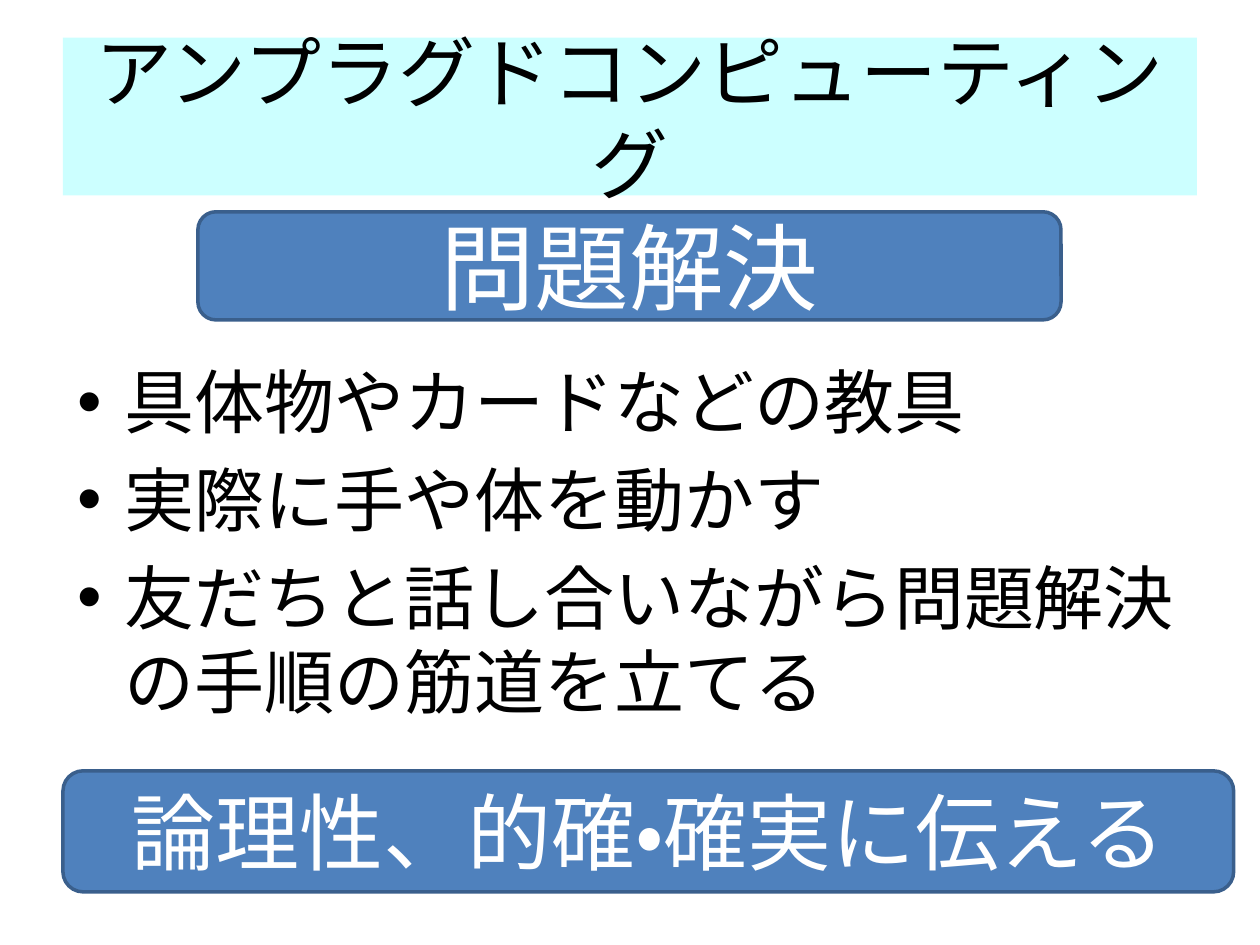
from dataclasses import dataclass

from lxml import etree
from pptx import Presentation
from pptx import util as u
from pptx.dml.color import RGBColor
from pptx.enum import lang, shapes, text
from pptx.oxml import ns


@dataclass(frozen=True)
class Theme:
    """Hold the colours, font and type sizes."""
    font: str = "Calibri"
    ink: str = "000000"
    pale: str = "CCFFFF"
    blue: str = "4F81BD"
    edge: str = "3A5F8C"
    white: str = "FFFFFF"
    title: int = 44
    body: int = 40
    goal: int = 54
    skill: int = 48


LOOK = Theme()
POINTS = (
    "具体物やカードなどの教具",
    "実際に手や体を動かす",
    "友だちと話し合いながら問題解決の手順の筋道を立てる",
)


def add_run(para, words, size, tint):
    """Add one styled run to a paragraph."""
    run = para.add_run()
    run.text = words
    font = run.font
    font.name = LOOK.font
    font.size = u.Pt(size)
    font.color.rgb = RGBColor.from_string(tint)
    font.language_id = lang.MSO_LANGUAGE_ID.JAPANESE


def add_panel(slide, kind, area, words, size, fill, tint, edge=None):
    """Add a filled shape with centred text."""
    panel = slide.shapes.add_shape(kind, *map(u.Cm, area))
    panel.shadow.inherit = False
    panel.fill.solid()
    panel.fill.fore_color.rgb = RGBColor.from_string(fill)
    if edge:
        panel.line.color.rgb = RGBColor.from_string(edge)
        panel.line.width = u.Pt(2)
    else:
        panel.line.fill.background()
    frame = panel.text_frame
    frame.word_wrap = True
    frame.vertical_anchor = text.MSO_ANCHOR.MIDDLE
    para = frame.paragraphs[0]
    para.alignment = text.PP_ALIGN.CENTER
    add_run(para, words, size, tint)


def set_bullet(para):
    """Give a paragraph a hanging round bullet."""
    props = para._p.get_or_add_pPr()
    hang = u.Cm(0.95)
    props.set("marL", str(hang))
    props.set("indent", str(-hang))
    face = etree.SubElement(props, ns.qn("a:buFont"))
    face.set("typeface", "Arial")
    mark = etree.SubElement(props, ns.qn("a:buChar"))
    mark.set("char", "•")


def add_list(slide, area, items):
    """Add a text box of bulleted items."""
    frame = slide.shapes.add_textbox(*map(u.Cm, area)).text_frame
    frame.word_wrap = True
    for rank, item in enumerate(items):
        para = frame.add_paragraph() if rank else frame.paragraphs[0]
        set_bullet(para)
        if rank:
            para.space_before = u.Pt(LOOK.body * 0.2)
        add_run(para, item, LOOK.body, LOOK.ink)


def main():
    """Build the slide and save it."""
    deck = Presentation()
    deck.slide_width, deck.slide_height = u.Cm(25.4), u.Cm(19.05)
    slide = deck.slides.add_slide(deck.slide_layouts[6])
    box = shapes.MSO_SHAPE
    add_panel(slide, box.RECTANGLE, (1.27, 0.76, 22.86, 3.18),
              "アンプラグドコンピューティング", LOOK.title, LOOK.pale, LOOK.ink)
    add_list(slide, (1.32, 7.11, 22.86, 7.42), POINTS)
    banners = (
        ((3.99, 4.27, 17.4, 2.18), "問題解決", LOOK.goal),
        ((1.27, 15.54, 23.6, 2.44), "論理性、的確・確実に伝える", LOOK.skill),
    )
    for area, words, size in banners:
        add_panel(slide, box.ROUNDED_RECTANGLE, area, words, size,
                  LOOK.blue, LOOK.white, LOOK.edge)
    deck.save("out.pptx")


if __name__ == "__main__":
    main()
